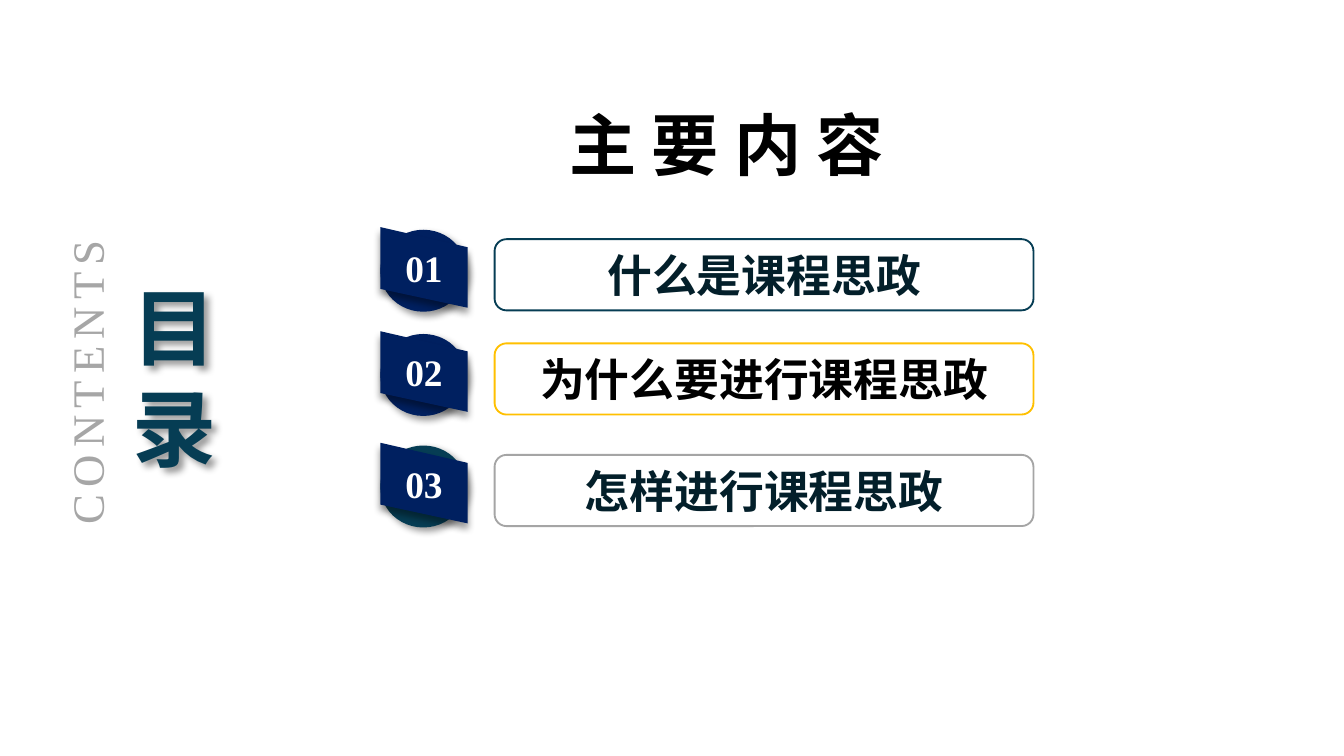
from lxml import etree
from pptx import Presentation
from pptx.dml.color import RGBColor
from pptx.enum.shapes import MSO_SHAPE
from pptx.enum.text import MSO_ANCHOR, PP_ALIGN
from pptx.oxml.ns import qn
from pptx.util import Inches, Pt

CENTER, LEFT = PP_ALIGN.CENTER, PP_ALIGN.LEFT
MIDDLE, TOP = MSO_ANCHOR.MIDDLE, MSO_ANCHOR.TOP
OVAL, ROUNDED = MSO_SHAPE.OVAL, MSO_SHAPE.ROUNDED_RECTANGLE

NAVY = RGBColor(0x00, 0x20, 0x60)
TEAL = RGBColor(0x06, 0x3D, 0x54)
INK = RGBColor(0x03, 0x1F, 0x2A)
GOLD = RGBColor(0xFF, 0xC0, 0x00)
GRAY = RGBColor(0xA5, 0xA5, 0xA5)
PALE = RGBColor(0xA6, 0xA6, 0xA6)
BLACK = RGBColor(0x00, 0x00, 0x00)
WHITE = RGBColor(0xFF, 0xFF, 0xFF)

SANS, SERIF = "Noto Sans CJK SC", "Times New Roman"
U = Inches(0.1)  # one grid step: 100 columns across the slide


def write(sp, text, size, font, color, bold=True, align=CENTER, anchor=MIDDLE, wrap=True):
    tf = sp.text_frame
    tf.word_wrap, tf.vertical_anchor = wrap, anchor
    p = tf.paragraphs[0]
    p.alignment = align
    r = p.add_run()
    r.text = text
    for name, value in {"size": Pt(size), "name": font, "bold": bold}.items():
        setattr(r.font, name, value)
    r.font.color.rgb = color
    etree.SubElement(r.font._element, qn("a:ea"), typeface=font)
    return r


def add_shadow(sp, degrees):
    effects = etree.SubElement(sp._element.spPr, qn("a:effectLst"))
    shadow = etree.SubElement(effects, qn("a:outerShdw"), blurRad=str(Pt(4)), dist=str(Pt(3)),
                              dir=str(degrees * 60000), algn="t", rotWithShape="0")
    color = etree.SubElement(shadow, qn("a:srgbClr"), val="000000")
    etree.SubElement(color, qn("a:alpha"), val="40000")


prs = Presentation()
prs.slide_width = 100 * U
prs.slide_height = prs.slide_width * 9 // 16
s = prs.slides.add_slide(prs.slide_layouts[6])

# Side label, read from bottom to top
sp = s.shapes.add_textbox(-7.8 * U, 26 * U, 28.4 * U, 4.9 * U)
sp.rotation = 270
r = write(sp, "CONTENTS", 24, SERIF, PALE, bold=False, wrap=False)
r.font._element.set("spc", "380")

# Stacked heading: the narrow box breaks after each character
sp = s.shapes.add_textbox(8.9 * U, 23.1 * U, 4.6 * U, 9.8 * U)
write(sp, "目录", 45, SANS, TEAL, align=LEFT)
add_shadow(sp, 45)

# Numbered entries: row top, text, text colour, frame colour, disc colour
entries = [
    (16.9, "什么是课程思政", INK, TEAL, NAVY),
    (24.65, "为什么要进行课程思政", BLACK, GOLD, NAVY),
    (32.95, "怎样进行课程思政", INK, GRAY, TEAL),
]
x = 28.3
for number, (y, text, ink, frame, disc_color) in enumerate(entries, 1):
    # Badge: slanted ribbon over a disc
    badge = s.shapes.add_group_shape()
    disc = badge.shapes.add_shape(OVAL, x * U, (y + 0.2) * U, 6.4 * U, 6.1 * U)
    fb = badge.shapes.build_freeform(x * U, y * U)
    fb.add_line_segments([(x * U, (y + 4.6) * U), ((x + 6.5) * U, (y + 6) * U),
                          ((x + 6.5) * U, (y + 1.5) * U)], close=True)
    ribbon = fb.convert_to_shape()
    for sp, color, degrees in [(disc, disc_color, 45), (ribbon, NAVY, 90)]:
        sp.fill.solid()
        sp.fill.fore_color.rgb = color
        sp.line.fill.background()
        add_shadow(sp, degrees)
    write(ribbon, f"{number:02d}", 20, SERIF, WHITE)

    # Framed entry text
    sp = s.shapes.add_shape(ROUNDED, 36.8 * U, (y + 0.9) * U, 40.1 * U, 5.3 * U)
    sp.shadow.inherit = False
    sp.fill.solid()
    sp.fill.fore_color.rgb = WHITE
    sp.line.color.rgb, sp.line.width = frame, Pt(1)
    write(sp, text, 24, SANS, ink)

# Title
sp = s.shapes.add_textbox(36.8 * U, 7.2 * U, 34.5 * U, 7.1 * U)
write(sp, "主 要 内 容", 36, SANS, BLACK, anchor=TOP)

prs.save("out.pptx")
